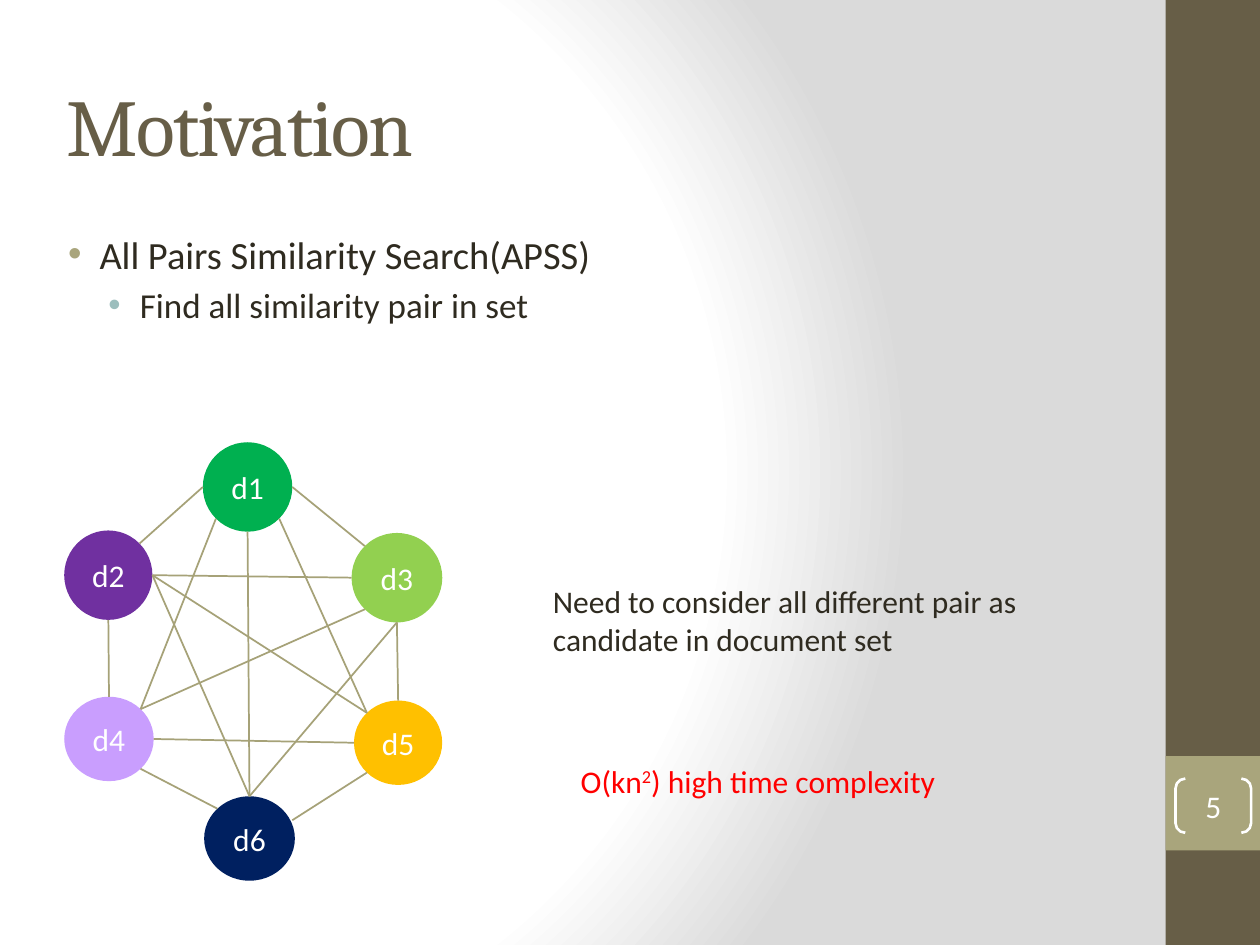
import math
from lxml import etree
from pptx import Presentation
from pptx import util as u
from pptx.dml.color import RGBColor
from pptx.enum import shapes, text
from pptx.oxml import parse_xml
from pptx.oxml.ns import nsdecls, qn

Inches, Pt = u.Inches, u.Pt
Kind = shapes.MSO_SHAPE


def style(para, size, color, font="Calibri"):
    for run in para.runs:
        run.font.size = Pt(size)
        run.font.name = font
        run.font.color.rgb = RGBColor.from_string(color)


def add(kind, box, fill=None, label=""):
    """Add a preset shape without outline, with a centred white label."""
    shape = slide.shapes.add_shape(kind, *map(Inches, box))
    shape.shadow.inherit = False
    shape.line.fill.background()
    if fill:
        shape.fill.solid()
        shape.fill.fore_color.rgb = RGBColor.from_string(fill)
    else:
        shape.fill.background()
    frame = shape.text_frame
    frame.text = label
    frame.vertical_anchor = text.MSO_ANCHOR.MIDDLE
    frame.paragraphs[0].alignment = text.PP_ALIGN.CENTER
    style(frame.paragraphs[0], 18, "FFFFFF")
    return shape


deck = Presentation()
deck.slide_width, deck.slide_height = Inches(10), Inches(7.5)
slide = deck.slides.add_slide(deck.slide_layouts[1])

# Background: white glow from the left, fading to grey
slide.background.fill.solid()
solid = slide.background._cSld.bg.bgPr.find(qn("a:solidFill"))
stops = "".join(
    f'<a:gs pos="{pos}000"><a:srgbClr val="{color}"/></a:gs>'
    for pos, color in [(0, "FFFFFF"), (75, "FFFFFF"), (100, "DADADA")])
solid.getparent().replace(solid, parse_xml(
    f'<a:gradFill {nsdecls("a")} rotWithShape="1"><a:gsLst>{stops}</a:gsLst>'
    '<a:path path="circle"><a:fillToRect l="20000" t="50000" r="100000" b="50000"/>'
    '</a:path></a:gradFill>'))

# Side bar and page number
add(Kind.RECTANGLE, (9.25, 0, 0.75, 7.5), "675E47")
add(Kind.RECTANGLE, (9.25, 6, 0.75, 0.75), "A9A57C")
page = add(Kind.DOUBLE_BRACKET, (9.33, 6.18, 0.6, 0.43), label="5")
page.adjustments[0] = 0.18
page.line.color.rgb = RGBColor.from_string("FFFFFF")
page.line.width = Pt(1.5)
frame = page.text_frame
frame.margin_left = frame.margin_right = frame.margin_top = frame.margin_bottom = 0

# Title and list
title, body = slide.placeholders
for holder, box in [(title, (0.43, 0.36, 8.33, 1.25)), (body, (0.31, 1.78, 8.33, 5.25))]:
    holder.left, holder.top, holder.width, holder.height = map(Inches, box)
    holder.text_frame.auto_size = text.MSO_AUTO_SIZE.NONE
title.text_frame.text = "Motivation"
title.text_frame.vertical_anchor = text.MSO_ANCHOR.MIDDLE
para = title.text_frame.paragraphs[0]
para.alignment = text.PP_ALIGN.LEFT
style(para, 46, "675E47", "Cambria")
para.runs[0].font._element.set("spc", "-100")

body.text_frame.text = "All Pairs Similarity Search(APSS)\nFind all similarity pair in set"
looks = [(22, 0.38, "A9A57C"), (20, 0.7, "9CBEBD")]
for level, (para, (size, margin, color)) in enumerate(zip(body.text_frame.paragraphs, looks)):
    para.level = level
    style(para, size, "2F2B20")
    props = para._p.get_or_add_pPr()
    props.set("marL", str(Inches(margin)))
    props.set("indent", str(Inches(-0.25)))
    tint = etree.SubElement(props, qn("a:buClr"))
    etree.SubElement(tint, qn("a:srgbClr")).set("val", color)
    etree.SubElement(props, qn("a:buFont")).set("typeface", "Arial")
    etree.SubElement(props, qn("a:buChar")).set("char", "•")

# Document nodes
nodes = {
    "d4": (0.51, 5.53, 0.71, 0.67, "C99EFE"),
    "d2": (0.51, 4.21, 0.7, 0.71, "7030A0"),
    "d3": (2.79, 4.23, 0.72, 0.71, "92D050"),
    "d1": (1.61, 3.51, 0.71, 0.71, "00B050"),
    "d5": (2.81, 5.56, 0.7, 0.67, "FFC000"),
    "d6": (1.62, 6.32, 0.72, 0.67, "002060"),
}
for name, (*box, color) in nodes.items():
    add(Kind.OVAL, box, color, name)

# Notes beside the graph
notes = [
    ((4.29, 3.78, 4.25, 2.28), "2F2B20", text.PP_ALIGN.LEFT,
     ["Need to consider all different pair as candidate in document set"]),
    ((4.32, 5.92, 3.39, 0.55), "FF0000", text.PP_ALIGN.CENTER,
     ["O(kn", "2", ") high time complexity"]),
]
for box, color, align, parts in notes:
    frame = slide.shapes.add_textbox(*map(Inches, box)).text_frame
    frame.word_wrap = True
    frame.vertical_anchor = text.MSO_ANCHOR.MIDDLE
    para = frame.paragraphs[0]
    para.alignment = align
    for part in parts:
        para.add_run().text = part
    style(para, 18, color)
para.runs[1].font._element.set("baseline", "30000")

# Pair lines: each end is a node and a compass point on its rim
angles = {"E": 0, "SE": 45, "S": 90, "SW": 135, "W": 180, "NW": 225, "N": 270, "NE": 315}
pairs = """d1 W d2 NE, d2 S d4 N, d4 SE d6 NW, d6 NE d5 SW, d3 S d5 N,
    d1 E d3 NW, d1 SW d4 NE, d1 S d6 N, d1 SE d5 NW, d2 E d3 W,
    d2 E d5 NW, d2 E d6 N, d3 S d6 N, d3 SW d4 NE, d4 E d5 W"""
for pair in pairs.split(","):
    first, start, last, stop = pair.split()
    ends = []
    for name, side in [(first, start), (last, stop)]:
        x, y, w, h, _ = nodes[name]
        turn = math.radians(angles[side])
        ends += [x + w / 2 * (1 + math.cos(turn)), y + h / 2 * (1 + math.sin(turn))]
    if (first, last) == ("d6", "d5"):
        ends[:2] = 2.32, 6.51  # this line stops just short of the rim
    line = slide.shapes.add_connector(shapes.MSO_CONNECTOR.STRAIGHT, *map(Inches, ends))
    line.line.color.rgb = RGBColor.from_string("A6A278")
    line.line.width = Pt(1)
    etree.SubElement(line._element.spPr, qn("a:effectLst"))

deck.save("out.pptx")
